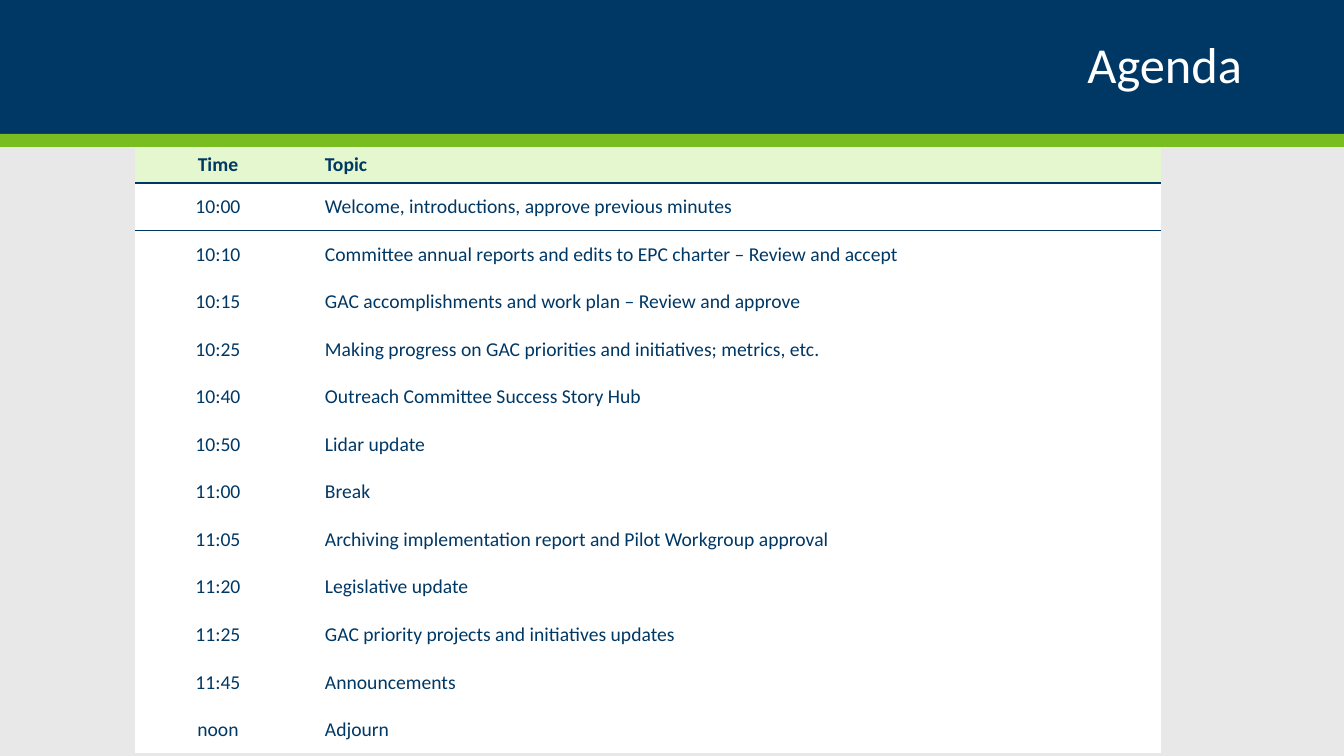
import pptx
import pptx.dml.color
import pptx.enum.shapes
import pptx.enum.text
import pptx.oxml
import pptx.oxml.ns
import pptx.util

TITLE = "Agenda"
HEADER = ("Time", "Topic")
AGENDA = [
    ("10:00", "Welcome, introductions, approve previous minutes"),
    ("10:10", "Committee annual reports and edits to EPC charter – Review and accept"),
    ("10:15", "GAC accomplishments and work plan – Review and approve"),
    ("10:25", "Making progress on GAC priorities and initiatives; metrics, etc."),
    ("10:40", "Outreach Committee Success Story Hub"),
    ("10:50", "Lidar update"),
    ("11:00", "Break"),
    ("11:05", "Archiving implementation report and Pilot Workgroup approval"),
    ("11:20", "Legislative update"),
    ("11:25", "GAC priority projects and initiatives updates"),
    ("11:45", "Announcements"),
    ("noon", "Adjourn"),
]

THEME = {
    "font": "Calibri",
    "navy": "003865",
    "green": "78BE21",
    "pale_green": "E4F7CE",
    "white": "FFFFFF",
    "grey": "E8E8E8",
    "title_size": 36,
    "table_size": 14,
    "rule_width": 1,
}
NO_GRID_STYLE = "{2D5ABB26-0587-4C30-8999-92F81FD0307C}"

# Lengths in px
SLIDE_WIDTH, SLIDE_HEIGHT = 1344, 756
BAND_HEIGHT, STRIPE_HEIGHT = 134, 13
TITLE_BOX = (93, 17, 1159, 101)
TABLE_LEFT = 135
COLUMN_WIDTHS = (166, 860)
HEADER_HEIGHT, ROW_HEIGHT = 36, 45
CELL_LEFT_MARGINS = (12, 24)
CELL_RIGHT_MARGIN = 12
HEADER_MARGIN, ROW_MARGIN = 6, 12

ALIGN = pptx.enum.text.PP_ALIGN
MIDDLE = pptx.enum.text.MSO_ANCHOR.MIDDLE


def px(length):
    return round(length * 914400 / 100.8)


def rgb(name):
    return pptx.dml.color.RGBColor.from_string(THEME[name])


def apply(target, values):
    for name, value in values.items():
        setattr(target, name, value)


def fill_solid(fill, color):
    fill.solid()
    fill.fore_color.rgb = rgb(color)


def write(paragraph, text, color, alignment, **font_values):
    paragraph.alignment = alignment
    run = paragraph.add_run()
    run.text = text
    apply(run.font, {"name": THEME["font"], **font_values})
    run.font.color.rgb = rgb(color)


def add_band(slide, top, height, color):
    band = slide.shapes.add_shape(
        pptx.enum.shapes.MSO_SHAPE.RECTANGLE, 0, px(top), px(SLIDE_WIDTH), px(height))
    band.shadow.inherit = False
    band.line.fill.background()
    fill_solid(band.fill, color)


def add_title(slide):
    box = slide.shapes.add_textbox(*map(px, TITLE_BOX))
    apply(box.text_frame, {"word_wrap": True, "vertical_anchor": MIDDLE})
    paragraph = box.text_frame.paragraphs[0]
    paragraph.line_spacing = 0.9
    write(paragraph, TITLE, "white", ALIGN.RIGHT,
          size=pptx.util.Pt(THEME["title_size"]))


def add_border(cell, side):
    """Rule one edge of a cell; side is "lnT" or "lnB"."""
    width = pptx.util.Pt(THEME["rule_width"])
    border = pptx.oxml.parse_xml(
        f'<a:{side} {pptx.oxml.ns.nsdecls("a")} w="{width}"><a:solidFill>'
        f'<a:srgbClr val="{THEME["navy"]}"/></a:solidFill></a:{side}>')
    cell._tc.get_or_add_tcPr().insert(0, border)


def add_agenda(slide):
    rows = [HEADER, *AGENDA]
    heights = [HEADER_HEIGHT] + [ROW_HEIGHT] * len(AGENDA)
    frame = slide.shapes.add_table(
        len(rows), len(HEADER), px(TABLE_LEFT), px(BAND_HEIGHT + STRIPE_HEIGHT),
        px(sum(COLUMN_WIDTHS)), px(sum(heights)))
    table = frame.table
    table.horz_banding = False
    table._tbl.tblPr.find(pptx.oxml.ns.qn("a:tableStyleId")).text = NO_GRID_STYLE
    for column, width in zip(table.columns, COLUMN_WIDTHS):
        column.width = px(width)

    for row_index, (texts, height) in enumerate(zip(rows, heights)):
        table.rows[row_index].height = px(height)
        is_header = row_index == 0
        margin = px(HEADER_MARGIN if is_header else ROW_MARGIN)
        for column_index, text in enumerate(texts):
            cell = table.cell(row_index, column_index)
            apply(cell, {
                "vertical_anchor": MIDDLE,
                "margin_left": px(CELL_LEFT_MARGINS[column_index]),
                "margin_right": px(CELL_RIGHT_MARGIN),
                "margin_top": margin,
                "margin_bottom": margin,
            })
            fill_solid(cell.fill, "pale_green" if is_header else "white")
            write(cell.text_frame.paragraphs[0], text, "navy",
                  (ALIGN.CENTER, ALIGN.LEFT)[column_index],
                  size=pptx.util.Pt(THEME["table_size"]), bold=is_header)
            if row_index < 2:
                add_border(cell, "lnB" if is_header else "lnT")


def main():
    presentation = pptx.Presentation()
    apply(presentation, {"slide_width": px(SLIDE_WIDTH), "slide_height": px(SLIDE_HEIGHT)})
    slide = presentation.slides.add_slide(presentation.slide_layouts[6])
    fill_solid(slide.background.fill, "grey")
    add_band(slide, 0, BAND_HEIGHT, "navy")
    add_band(slide, BAND_HEIGHT, STRIPE_HEIGHT, "green")
    add_title(slide)
    add_agenda(slide)
    presentation.save("out.pptx")


if __name__ == "__main__":
    main()
